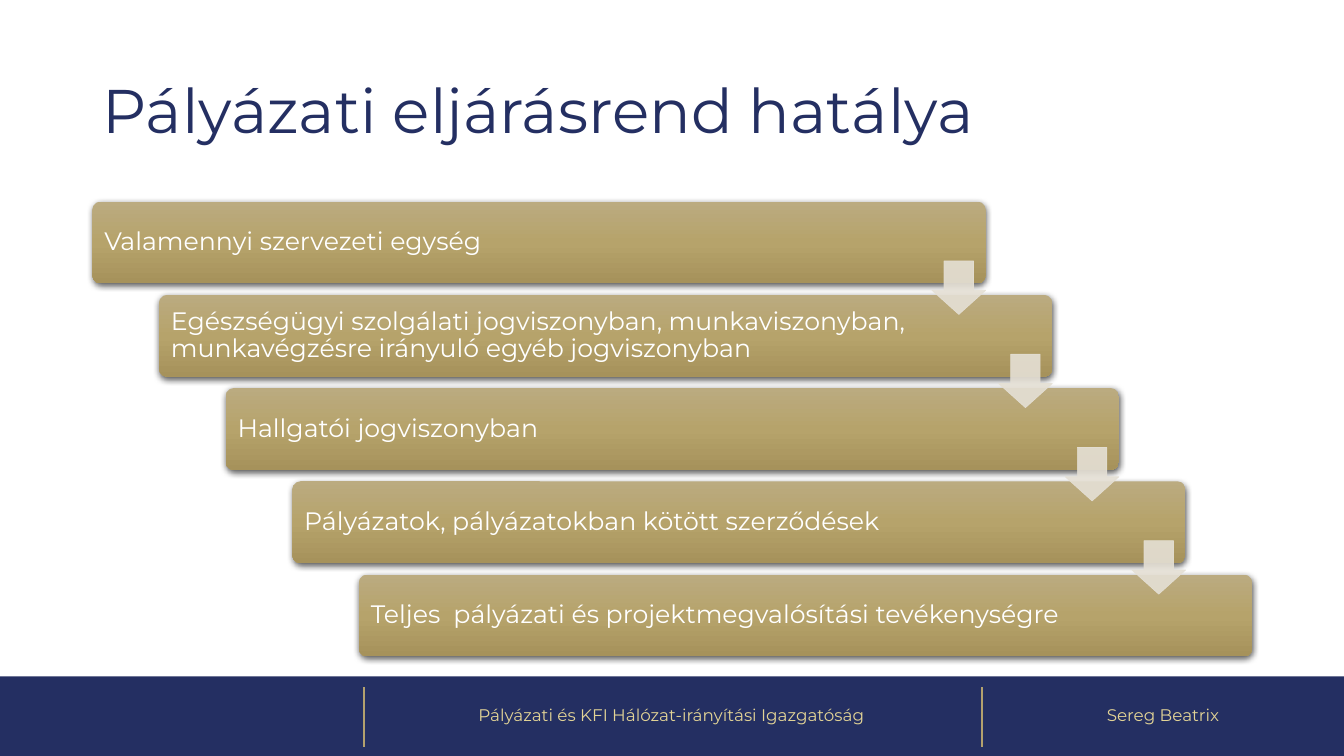
from copy import deepcopy

from lxml.etree import SubElement
from pptx import Presentation
from pptx.dml.color import RGBColor
from pptx.enum.shapes import MSO_CONNECTOR as Link, MSO_SHAPE as Form
from pptx.enum.text import MSO_ANCHOR as Anchor, PP_ALIGN as Align
from pptx.oxml.ns import qn
from pptx.util import Pt

NAVY = RGBColor(0x24, 0x2F, 0x62)
GOLD = RGBColor(0xB3, 0xA1, 0x6E)
CREAM = RGBColor(0xE3, 0xD4, 0x96)
SAND = RGBColor(0xE5, 0xE0, 0xD5)
WHITE = RGBColor(0xFF, 0xFF, 0xFF)
SHADES = (
    (0, RGBColor(0xBB, 0xAB, 0x80)),
    (0.5, RGBColor(0xB6, 0xA3, 0x6B)),
    (1, RGBColor(0xA6, 0x92, 0x5B)),
)

STEPS = (
    "Valamennyi szervezeti egység",
    "Egészségügyi szolgálati jogviszonyban, munkaviszonyban, "
    "munkavégzésre irányuló egyéb jogviszonyban",
    "Hallgatói jogviszonyban",
    "Pályázatok, pályázatokban kötött szerződések",
    "Teljes  pályázati és projektmegvalósítási tevékenységre",
)


class Painter:
    face = "Montserrat"

    def __init__(self, slide):
        self.slide = slide
        self.shapes = slide.shapes

    def letter(self, shape, text, size, color, align=Align.LEFT):
        frame = shape.text_frame
        frame.text = text
        frame.word_wrap = True
        frame.vertical_anchor = Anchor.MIDDLE
        line = frame.paragraphs[0]
        line.alignment = align
        line.line_spacing = 0.9
        font = line.runs[0].font
        font.name = self.face
        font.size = Pt(size)
        font.color.rgb = color

    def title(self, text, *box):
        head = self.shapes.title
        head.left, head.top, head.width, head.height = map(Pt, box)
        self.letter(head, text, 44, NAVY)

    def label(self, text, *box):
        self.letter(self.shapes.add_textbox(*map(Pt, box)), text, 12, CREAM, Align.CENTER)

    def shape(self, form, *box):
        shape = self.shapes.add_shape(form, *map(Pt, box))
        shape.shadow.inherit = False
        shape.line.fill.background()
        return shape

    def band(self, *box):
        band = self.shape(Form.RECTANGLE, *box)
        band.fill.solid()
        band.fill.fore_color.rgb = NAVY

    def rule(self, x, top, end):
        rule = self.shapes.add_connector(Link.STRAIGHT, Pt(x), Pt(top), Pt(x), Pt(end))
        rule.line.color.rgb = GOLD
        rule.line.width = Pt(1.5)
        SubElement(rule._element.spPr, qn("a:effectLst"))

    def fade(self, shape):
        shape.fill.gradient()
        shape.fill.gradient_angle = 270
        stops = shape._element.spPr.find(".//" + qn("a:gsLst"))
        stops.append(deepcopy(stops[0]))
        for stop, (place, color) in zip(shape.fill.gradient_stops, SHADES):
            stop.position = place
            stop.color.rgb = color

    def shade(self, shape):
        effects = shape._element.spPr.find(qn("a:effectLst"))
        outer = SubElement(
            effects, qn("a:outerShdw"), blurRad=str(Pt(4.5)), dist=str(Pt(1.5)),
            dir="5400000", algn="ctr", rotWithShape="0",
        )
        black = SubElement(outer, qn("a:srgbClr"), val="000000")
        SubElement(black, qn("a:alpha"), val="63000")

    def bar(self, text, *box):
        bar = self.shape(Form.ROUNDED_RECTANGLE, *box)
        bar.adjustments[0] = 0.1
        self.fade(bar)
        self.shade(bar)
        self.letter(bar, text, 18, WHITE)
        frame = bar.text_frame
        frame.margin_left = Pt(6.8)
        frame.margin_right = Pt(92)

    def arrow(self, *box):
        arrow = self.shape(Form.DOWN_ARROW, *box)
        arrow.adjustments[0] = 0.55
        arrow.adjustments[1] = 0.45
        arrow.fill.solid()
        arrow.fill.fore_color.rgb = SAND
        arrow.line.color.rgb = SAND
        arrow.line.width = Pt(0.5)
        for color in arrow._element.spPr.iter(qn("a:srgbClr")):
            SubElement(color, qn("a:alpha"), val="90000")


def main():
    deck = Presentation()
    deck.slide_width, deck.slide_height = Pt(960), Pt(540)
    pen = Painter(deck.slides.add_slide(deck.slide_layouts[5]))

    foot = 483.2
    pen.band(0, foot, 960, 540 - foot)
    for x in (260, 701.4):
        pen.rule(x, 491, 533.5)
    pen.title("Pályázati eljárásrend hatálya", 66, 28.8, 828, 104.4)
    pen.label("Pályázati és KFI Hálózat-irányítási Igazgatóság", 258.6, foot, 442, 540 - foot)
    pen.label("Sereg Beatrix", 701.4, foot, 258.6, 540 - foot)

    left, top, wide, high = 66, 144, 638, 58.5
    across, down = 47.6, 66.6
    for i, text in enumerate(STEPS):
        pen.bar(text, left + i * across, top + i * down, wide, high)
    size = 38.2
    for i in range(len(STEPS) - 1):
        pen.arrow(left + wide - size + i * across, 186.4 + i * down, size, size)

    deck.save("out.pptx")


if __name__ == "__main__":
    main()
